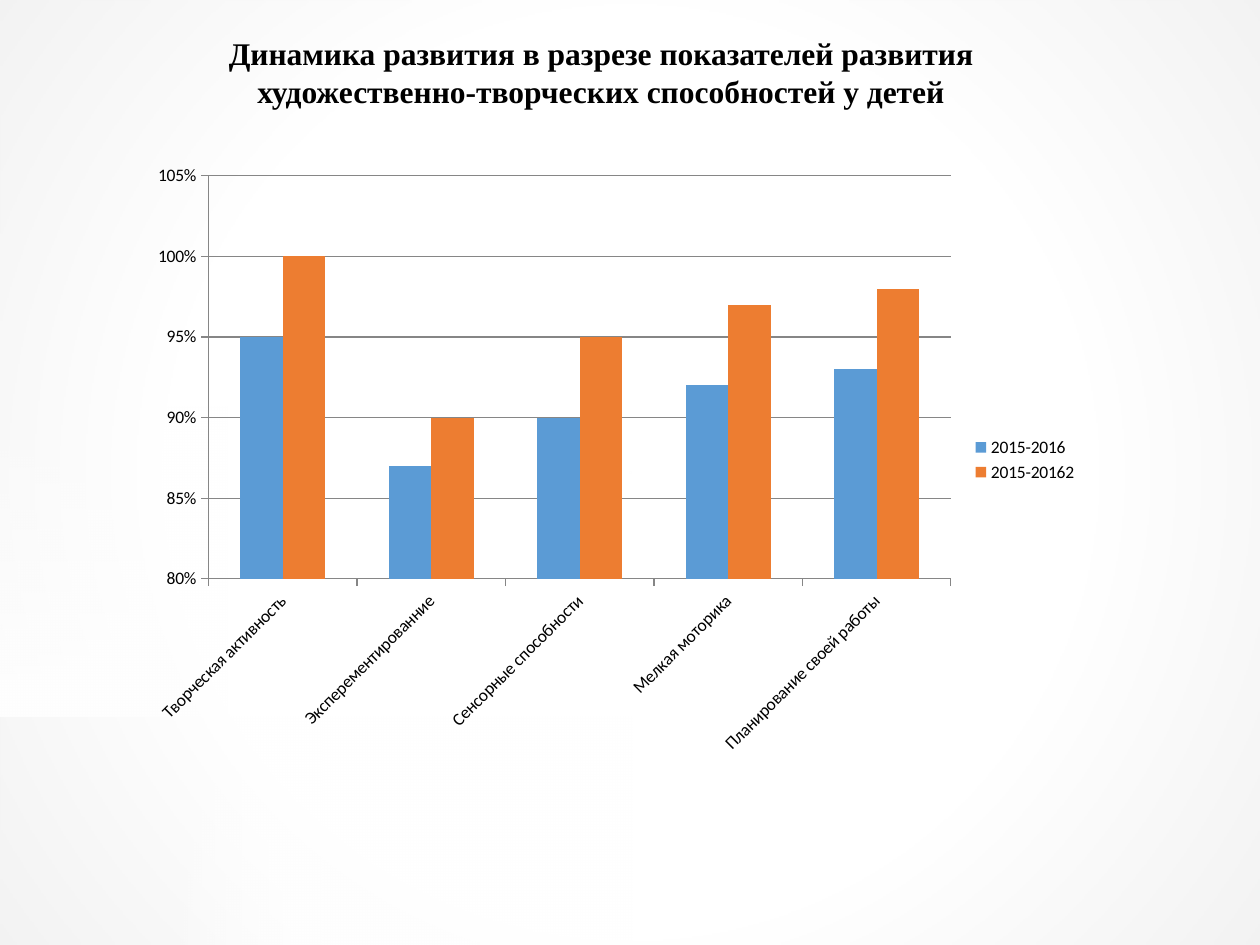
from lxml.etree import SubElement
from pptx import Presentation
from pptx.chart.data import CategoryChartData as ChartData
from pptx.dml.color import RGBColor
from pptx.enum.chart import XL_CHART_TYPE as ChartType, XL_LEGEND_POSITION as LegendPosition
from pptx.enum.chart import XL_TICK_MARK as TickMark
from pptx.enum.shapes import MSO_SHAPE as Preset
from pptx.enum.text import MSO_AUTO_SIZE as AutoSize, PP_ALIGN as Align
from pptx.oxml.ns import qn
from pptx.util import Cm, Pt

COLORS = {
    "white": "FFFFFF",
    "edge": "F2F2F2",
    "text": "000000",
    "axis": "868686",
    "first": "5B9BD5",
    "second": "ED7D31",
}
CATEGORIES = [
    "Творческая активность",
    "Эксперементированние",
    "Сенсорные способности",
    "Мелкая моторика",
    "Планирование своей работы",
]
SERIES = [
    ("2015-2016", (0.95, 0.87, 0.9, 0.92, 0.93), "first"),
    ("2015-20162", (1, 0.9, 0.95, 0.97, 0.98), "second"),
]
FADES = [
    (3.25, 14.45, 3.25, 4.6, 0),
    (-0.84, 9.02, 6.27, 4.6, 90),
    (6.5, 14.45, 6.27, 4.6, 180),
]


def rgb(name):
    """Return the named palette colour."""
    return RGBColor.from_string(COLORS[name])


def add_gradient(page, left, top, width, height, stops, radial=False, rotation=0):
    """Add a borderless rectangle with (percent, colour, opacity) gradient stops."""
    panel = page.shapes.add_shape(Preset.RECTANGLE, Cm(left), Cm(top), Cm(width), Cm(height))
    panel.shadow.inherit = False
    panel.rotation = rotation
    panel.line.fill.background()
    panel.fill.gradient()
    gradient = panel.fill._xPr.find(qn("a:gradFill"))
    for child in list(gradient):
        gradient.remove(child)
    stop_list = SubElement(gradient, qn("a:gsLst"))
    for percent, color, opacity in stops:
        stop = SubElement(stop_list, qn("a:gs"), pos=str(percent * 1000))
        tint = SubElement(stop, qn("a:srgbClr"), val=COLORS[color])
        SubElement(tint, qn("a:alpha"), val=str(opacity * 1000))
    if radial:
        circle = SubElement(gradient, qn("a:path"), path="circle")
        SubElement(circle, qn("a:fillToRect"), l="50000", t="50000", r="50000", b="50000")
    else:
        SubElement(gradient, qn("a:lin"), ang="10800000", scaled="0")


def add_background(page):
    """Shade the slide edges and soften the lower left corner."""
    vignette = [(0, "white", 0), (58, "white", 100), (100, "edge", 100)]
    add_gradient(page, 0, 0, 25.4, 19.05, vignette, radial=True)
    fade = [(0, "white", 100), (100, "white", 0)]
    for left, top, width, height, rotation in FADES:
        add_gradient(page, left, top, width, height, fade, rotation=rotation)


def add_title(page, text):
    """Add the centred bold heading."""
    box = page.shapes.add_textbox(Cm(3.28), Cm(0.56), Cm(17.68), Cm(1.8))
    frame = box.text_frame
    frame.word_wrap = True
    frame.auto_size = AutoSize.SHAPE_TO_FIT_TEXT
    para = frame.paragraphs[0]
    para.text = text
    para.alignment = Align.CENTER
    font = para.font
    font.name, font.size, font.bold = "Times New Roman", Pt(18), True
    font.color.rgb = rgb("text")


def style_axis(axis):
    """Give an axis outward ticks and a thin grey line."""
    axis.major_tick_mark = TickMark.OUTSIDE
    axis.minor_tick_mark = TickMark.NONE
    axis.format.line.color.rgb = rgb("axis")
    axis.format.line.width = Pt(0.75)


def add_column_chart(page):
    """Add the clustered columns comparing both periods."""
    data = ChartData(number_format="0%")
    data.categories = CATEGORIES
    for name, values, _ in SERIES:
        data.add_series(name, values)
    chart = page.shapes.add_chart(
        ChartType.COLUMN_CLUSTERED, Cm(2.8), Cm(3.1), Cm(19.18), Cm(12.34), data
    ).chart
    chart.has_title = False
    chart.font.name, chart.font.size = "Calibri", Pt(10)
    chart.font.color.rgb = rgb("text")
    chart.has_legend = True
    chart.legend.position = LegendPosition.RIGHT
    chart.legend.include_in_layout = False

    plot = chart.plots[0]
    plot.gap_width, plot.overlap, plot.vary_by_categories = 150, 0, False
    for series, (_, _, color) in zip(plot.series, SERIES):
        series.format.fill.solid()
        series.format.fill.fore_color.rgb = rgb(color)

    style_axis(chart.category_axis)
    chart.category_axis.tick_labels.font.size = Pt(10)
    labels = chart.category_axis._element.find(qn("c:txPr")).find(qn("a:bodyPr"))
    labels.set("rot", "-2700000")

    scale = chart.value_axis
    style_axis(scale)
    scale.minimum_scale, scale.maximum_scale, scale.major_unit = 0.8, 1.05, 0.05
    scale.tick_labels.number_format = "0%"
    scale.tick_labels.number_format_is_linked = False
    scale.has_major_gridlines = True
    scale.major_gridlines.format.line.color.rgb = rgb("axis")
    scale.major_gridlines.format.line.width = Pt(0.75)


def main():
    """Build and save the slide."""
    deck = Presentation()
    deck.slide_width, deck.slide_height = Cm(25.4), Cm(19.05)
    page = deck.slides.add_slide(deck.slide_layouts[6])
    page.background.fill.solid()
    page.background.fill.fore_color.rgb = rgb("white")
    add_background(page)
    add_title(
        page,
        "Динамика развития в разрезе показателей развития "
        "художественно-творческих способностей у детей",
    )
    add_column_chart(page)
    deck.save("out.pptx")


if __name__ == "__main__":
    main()
